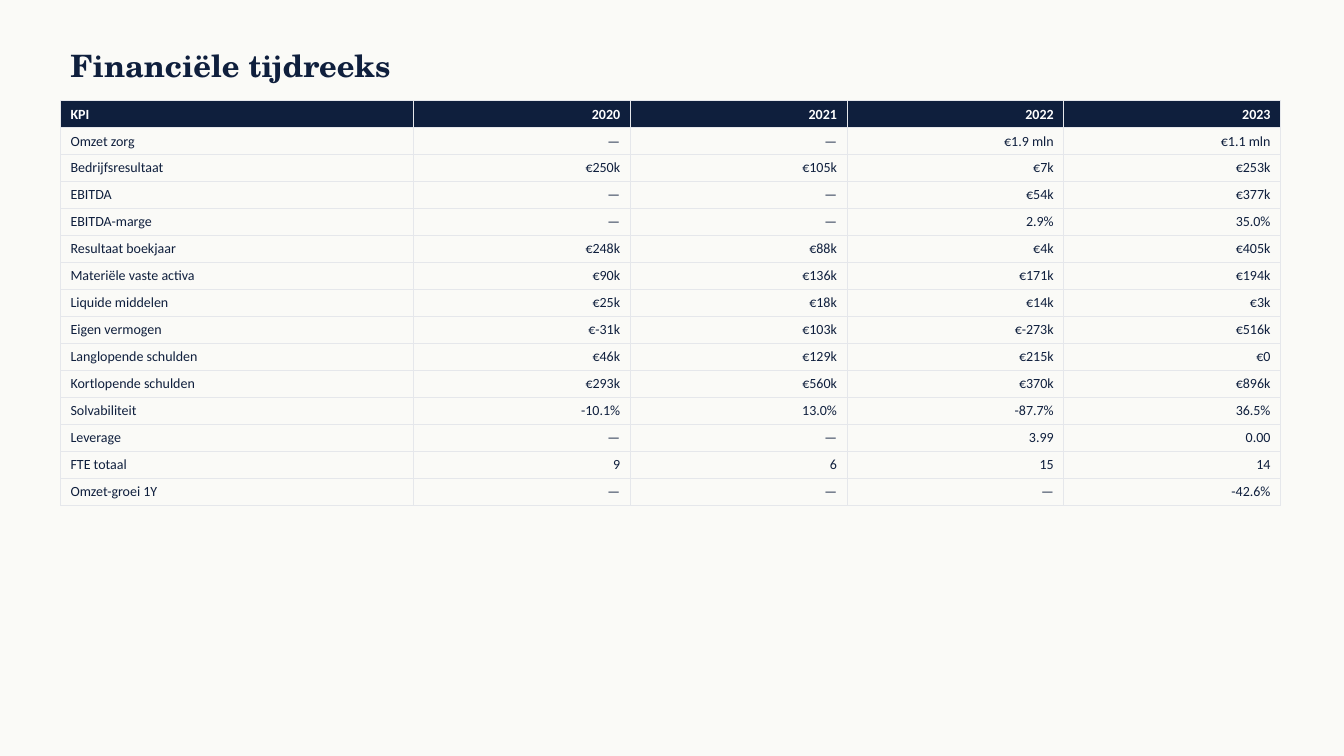
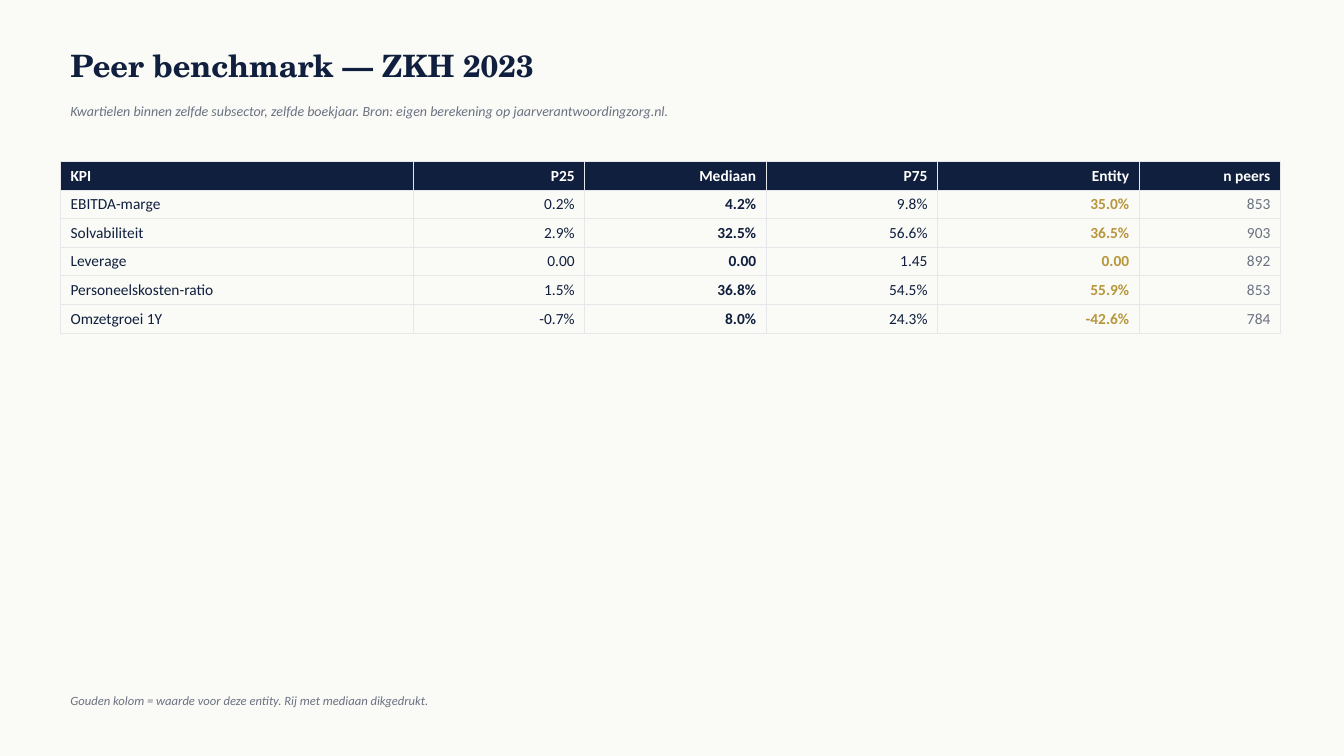
import lxml.etree
import pptx
import pptx.dml.color
import pptx.enum.text
import pptx.oxml.ns
import pptx.util

INK = {"navy": "0F1F3D", "paper": "FAFAF7", "white": "FFFFFF",
       "grey": "6B7280", "gold": "B8973B", "rule": "E5E7EB"}
UNIT = pptx.util.Inches(0.05)
LEFT, WIDE, ROW = 12, 240, 5
EDGE = pptx.util.Pt(0.5)
ALIGN = pptx.enum.text.PP_ALIGN
SANS = "Calibri"

FORM = {
    "title": {"name": "TeX Gyre Schola", "size": 22, "bold": True, "ink": "navy"},
    "note": {"name": SANS, "size": 10, "italic": True, "ink": "grey"},
    "foot": {"name": SANS, "size": 9, "italic": True, "ink": "grey"},
    "head": {"name": SANS, "bold": True, "ink": "white"},
    "body": {"name": SANS, "bold": False, "ink": "navy"},
    "strong": {"name": SANS, "bold": True, "ink": "navy"},
    "gold": {"name": SANS, "bold": True, "ink": "gold"},
    "dim": {"name": SANS, "bold": False, "ink": "grey"},
}

DECK = [
    {
        "texts": [("title", 8, 10, "Financiële tijdreeks")],
        "top": 20,
        "size": 10,
        "cols": [70, 43, 43, 43, 43],
        "forms": ["body"] * 5,
        "rows": [
            ["KPI", "2020", "2021", "2022", "2023"],
            ["Omzet zorg", "—", "—", "€1.9 mln", "€1.1 mln"],
            ["Bedrijfsresultaat", "€250k", "€105k", "€7k", "€253k"],
            ["EBITDA", "—", "—", "€54k", "€377k"],
            ["EBITDA-marge", "—", "—", "2.9%", "35.0%"],
            ["Resultaat boekjaar", "€248k", "€88k", "€4k", "€405k"],
            ["Materiële vaste activa", "€90k", "€136k", "€171k", "€194k"],
            ["Liquide middelen", "€25k", "€18k", "€14k", "€3k"],
            ["Eigen vermogen", "€-31k", "€103k", "€-273k", "€516k"],
            ["Langlopende schulden", "€46k", "€129k", "€215k", "€0"],
            ["Kortlopende schulden", "€293k", "€560k", "€370k", "€896k"],
            ["Solvabiliteit", "-10.1%", "13.0%", "-87.7%", "36.5%"],
            ["Leverage", "—", "—", "3.99", "0.00"],
            ["FTE totaal", "9", "6", "15", "14"],
            ["Omzet-groei 1Y", "—", "—", "—", "-42.6%"],
        ],
    },
    {
        "texts": [
            ("title", 8, 10, "Peer benchmark — ZKH 2023"),
            ("note", 19, 6, "Kwartielen binnen zelfde subsector, zelfde boekjaar. "
                            "Bron: eigen berekening op jaarverantwoordingzorg.nl."),
            ("foot", 136, 6, "Gouden kolom = waarde voor deze entity. "
                             "Rij met mediaan dikgedrukt."),
        ],
        "top": 32,
        "size": 11,
        "cols": [70, 34, 36, 34, 40, 28],
        "forms": ["body", "body", "strong", "body", "gold", "dim"],
        "rows": [
            ["KPI", "P25", "Mediaan", "P75", "Entity", "n peers"],
            ["EBITDA-marge", "0.2%", "4.2%", "9.8%", "35.0%", "853"],
            ["Solvabiliteit", "2.9%", "32.5%", "56.6%", "36.5%", "903"],
            ["Leverage", "0.00", "0.00", "1.45", "0.00", "892"],
            ["Personeelskosten-ratio", "1.5%", "36.8%", "54.5%", "55.9%", "853"],
            ["Omzetgroei 1Y", "-0.7%", "8.0%", "24.3%", "-42.6%", "784"],
        ],
    },
]


def write(frame, text, form, align=ALIGN.LEFT):
    para = frame.paragraphs[0]
    para.alignment = align
    run = para.add_run()
    run.text = text
    for key, val in form.items():
        if key == "ink":
            run.font.color.rgb = pptx.dml.color.RGBColor.from_string(INK[val])
        else:
            setattr(run.font, key, pptx.util.Pt(val) if key == "size" else val)


def border(cell):
    props = cell._tc.get_or_add_tcPr()
    for side in ("lnL", "lnR", "lnT", "lnB"):
        line = lxml.etree.SubElement(props, pptx.oxml.ns.qn("a:" + side), w=str(EDGE))
        fill = lxml.etree.SubElement(line, pptx.oxml.ns.qn("a:solidFill"))
        lxml.etree.SubElement(fill, pptx.oxml.ns.qn("a:srgbClr"), val=INK["rule"])


prs = pptx.Presentation()
prs.slide_width = pptx.util.Inches(13.33)
prs.slide_height = pptx.util.Inches(7.5)
back = prs.slide_master.background.fill
back.solid()
back.fore_color.rgb = pptx.dml.color.RGBColor.from_string(INK["paper"])

for page in DECK:
    slide = prs.slides.add_slide(prs.slide_layouts[6])
    for form, top, high, text in page["texts"]:
        box = slide.shapes.add_textbox(LEFT * UNIT, top * UNIT, WIDE * UNIT, high * UNIT)
        box.text_frame.word_wrap = True
        box.text_frame.vertical_anchor = pptx.enum.text.MSO_ANCHOR.MIDDLE
        write(box.text_frame, text, FORM[form])

    rows, cols = page["rows"], page["cols"]
    table = slide.shapes.add_table(
        len(rows), len(cols), LEFT * UNIT, page["top"] * UNIT,
        sum(cols) * UNIT, len(rows) * ROW * UNIT).table
    table.horz_banding = False
    for col, wide in zip(table.columns, cols):
        col.width = wide * UNIT
    for y, row in enumerate(rows):
        for x, text in enumerate(row):
            cell = table.cell(y, x)
            border(cell)
            if y == 0:
                cell.fill.solid()
                cell.fill.fore_color.rgb = pptx.dml.color.RGBColor.from_string(INK["navy"])
            else:
                cell.fill.background()
            form = FORM[page["forms"][x] if y else "head"]
            write(cell.text_frame, text, {**form, "size": page["size"]},
                  ALIGN.RIGHT if x else ALIGN.LEFT)

prs.save("out.pptx")
